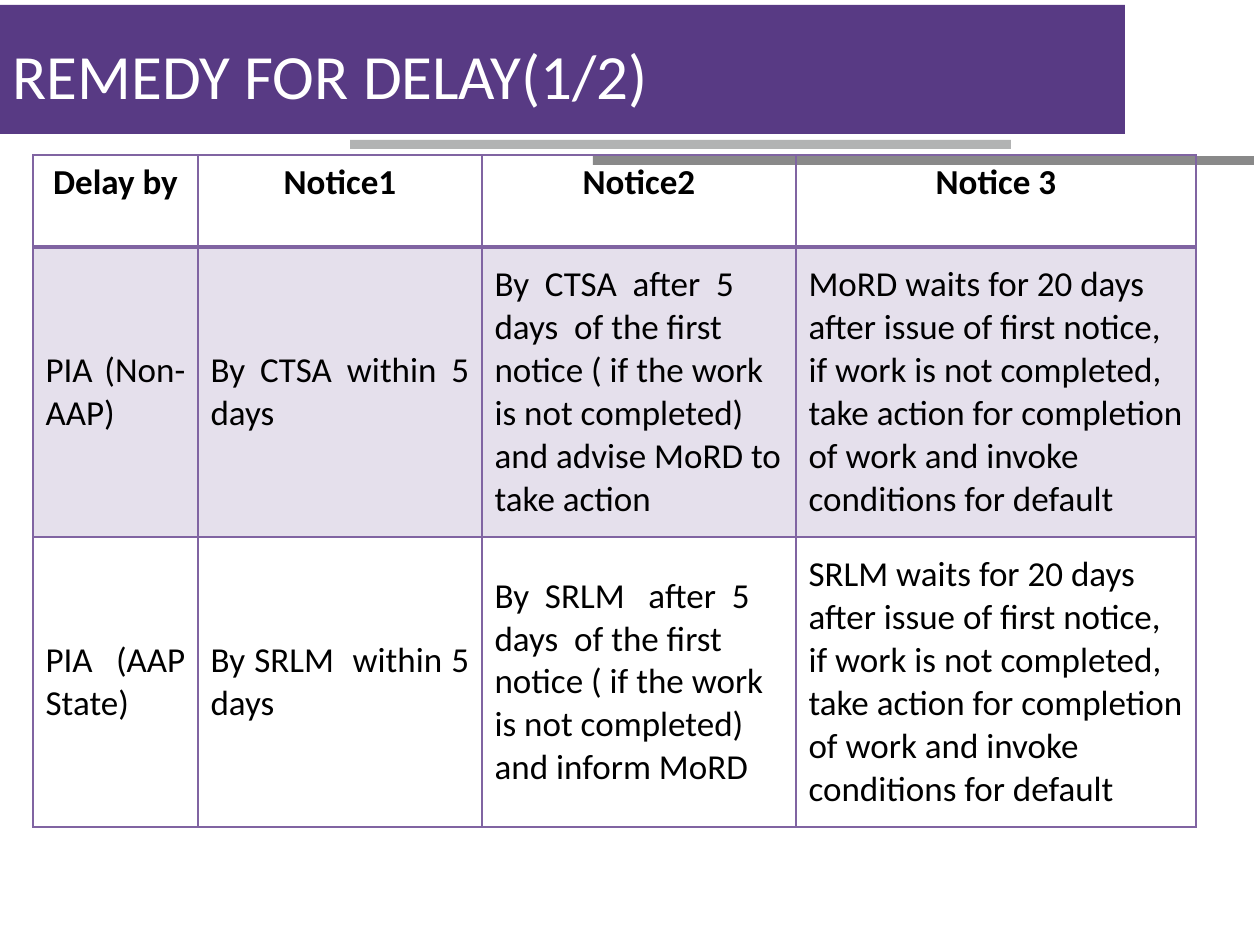
from lxml.etree import SubElement
from pptx import Presentation
from pptx.dml.color import RGBColor
from pptx.enum.shapes import MSO_SHAPE
from pptx.enum.text import MSO_ANCHOR, MSO_AUTO_SIZE, PP_ALIGN
from pptx.oxml.ns import qn
from pptx.util import Pt

PX = 914400 / 126
COLORS = {"band": "583A84", "dark_bar": "898989", "light_bar": "B2B3B3",
          "title": "FFFFFF", "text": "000000", "accent": "8064A2"}


def emu(*lengths):
    return [round(length * PX) for length in lengths]


def set_border(cell, side, width):
    line = SubElement(cell._tc.get_or_add_tcPr(), qn(f"a:ln{side}"), w=str(Pt(width)))
    fill = SubElement(line, qn("a:solidFill"))
    SubElement(fill, qn("a:srgbClr"), val=COLORS["accent"])


prs = Presentation()
prs.slide_width, prs.slide_height = emu(1260, 945)
slide = prs.slides.add_slide(prs.slide_layouts[5])

# Header band and the two offset bars
for color, box in [("band", (0, 5, 1125, 129)),
                   ("dark_bar", (593, 156, 661, 9)),
                   ("light_bar", (350, 140, 661, 9))]:
    bar = slide.shapes.add_shape(MSO_SHAPE.RECTANGLE, *emu(*box))
    bar.shadow.inherit = False
    bar.fill.solid()
    bar.fill.fore_color.rgb = RGBColor.from_string(COLORS[color])
    bar.line.fill.background()

# Title, brought in front of the band
title = slide.shapes.title
title.element.getparent().append(title.element)
title.left, title.top, title.width, title.height = emu(0, 15, 1135, 129)
title.text_frame.text = "REMEDY FOR DELAY(1/2)"
title.text_frame.auto_size = MSO_AUTO_SIZE.NONE
title.text_frame.vertical_anchor = MSO_ANCHOR.MIDDLE
heading = title.text_frame.paragraphs[0]
heading.alignment = PP_ALIGN.LEFT
heading.line_spacing = 0.9
for name, value in {"name": "Calibri", "size": Pt(36)}.items():
    setattr(heading.font, name, value)
heading.font.color.rgb = RGBColor.from_string(COLORS["title"])

# Notices table
waits = ("waits for 20 days after issue of first notice, if work is not completed, "
         "take action for completion of work and invoke conditions for default")
after = "after  5 days  of the first notice ( if the work is not completed) and"
notices = [
    ["Delay by", "Notice1", "Notice2", "Notice 3"],
    ["PIA (Non-AAP)", "By CTSA within 5 days",
     f"By  CTSA  {after} advise MoRD to take action", f"MoRD {waits}"],
    ["PIA (AAP State)", "By SRLM  within 5 days",
     f"By  SRLM   {after} inform MoRD", f"SRLM {waits}"],
]
col_widths = emu(165, 284, 314, 400)
row_heights = emu(92, 290, 290)
table = slide.shapes.add_table(3, 4, *emu(33, 155, 1163, 672)).table
for column, width in zip(table.columns, col_widths):
    column.width = width
for row, height in zip(table.rows, row_heights):
    row.height = height

for r, row_texts in enumerate(notices):
    is_header = r == 0
    for c, text in enumerate(row_texts):
        cell = table.cell(r, c)
        cell.text = text
        cell.vertical_anchor = MSO_ANCHOR.TOP if is_header else MSO_ANCHOR.MIDDLE
        paragraph = cell.text_frame.paragraphs[0]
        if is_header:
            paragraph.alignment = PP_ALIGN.CENTER
        else:
            paragraph.alignment = PP_ALIGN.JUSTIFY if c < 2 else PP_ALIGN.LEFT
        for name, value in {"name": "Calibri", "size": Pt(20), "bold": is_header}.items():
            setattr(paragraph.font, name, value)
        paragraph.font.color.rgb = RGBColor.from_string(COLORS["text"])

        widths = {"L": 1, "R": 1, "T": 2 if r == 1 else 1, "B": 2 if is_header else 1}
        for side, width in widths.items():
            set_border(cell, side, width)
        if r == 1:
            cell.fill.solid()
            cell.fill.fore_color.rgb = RGBColor.from_string(COLORS["accent"])
            tint = cell._tc.tcPr.find(qn("a:solidFill")).find(qn("a:srgbClr"))
            SubElement(tint, qn("a:alpha"), val="20000")
        else:
            cell.fill.background()

prs.save("out.pptx")
